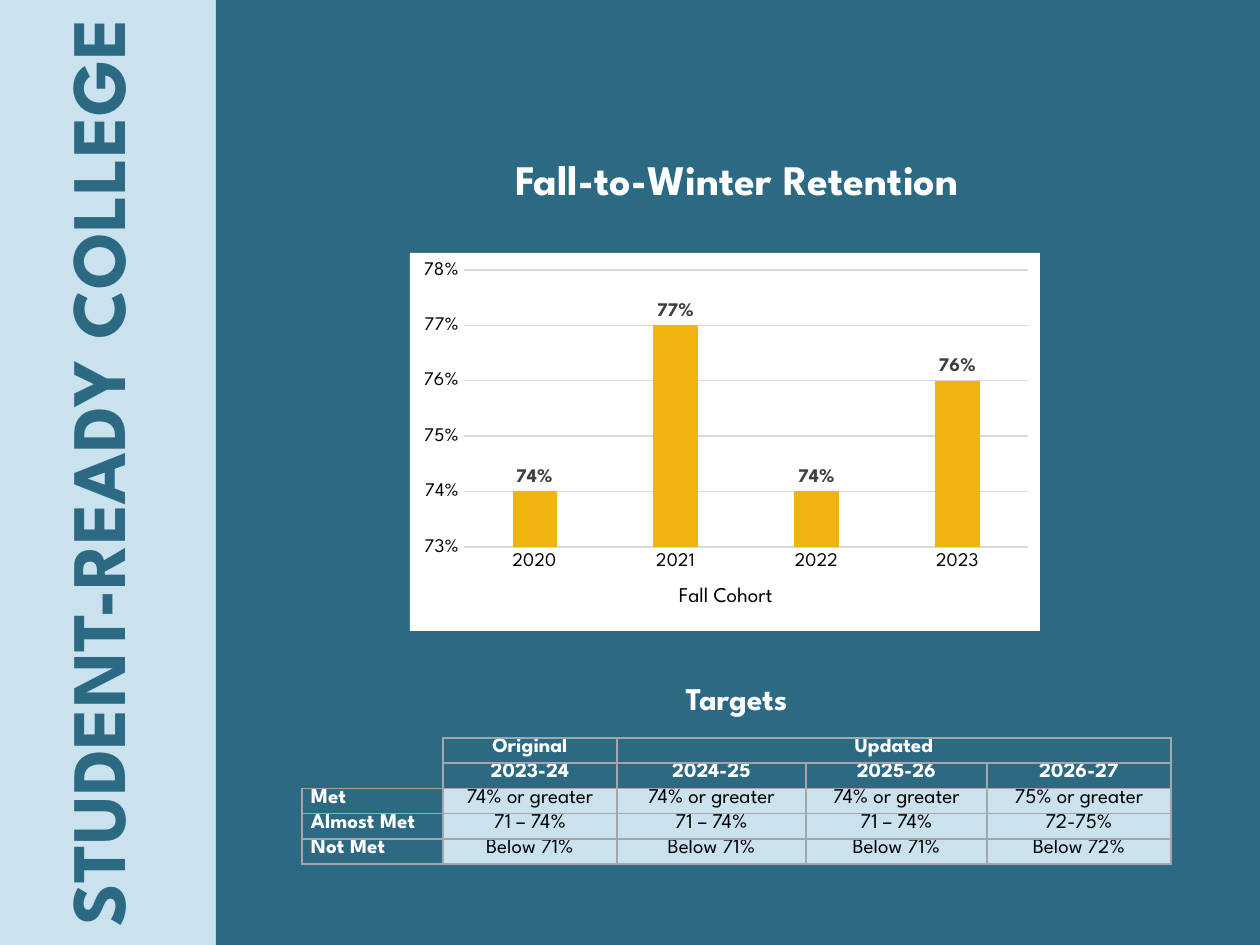
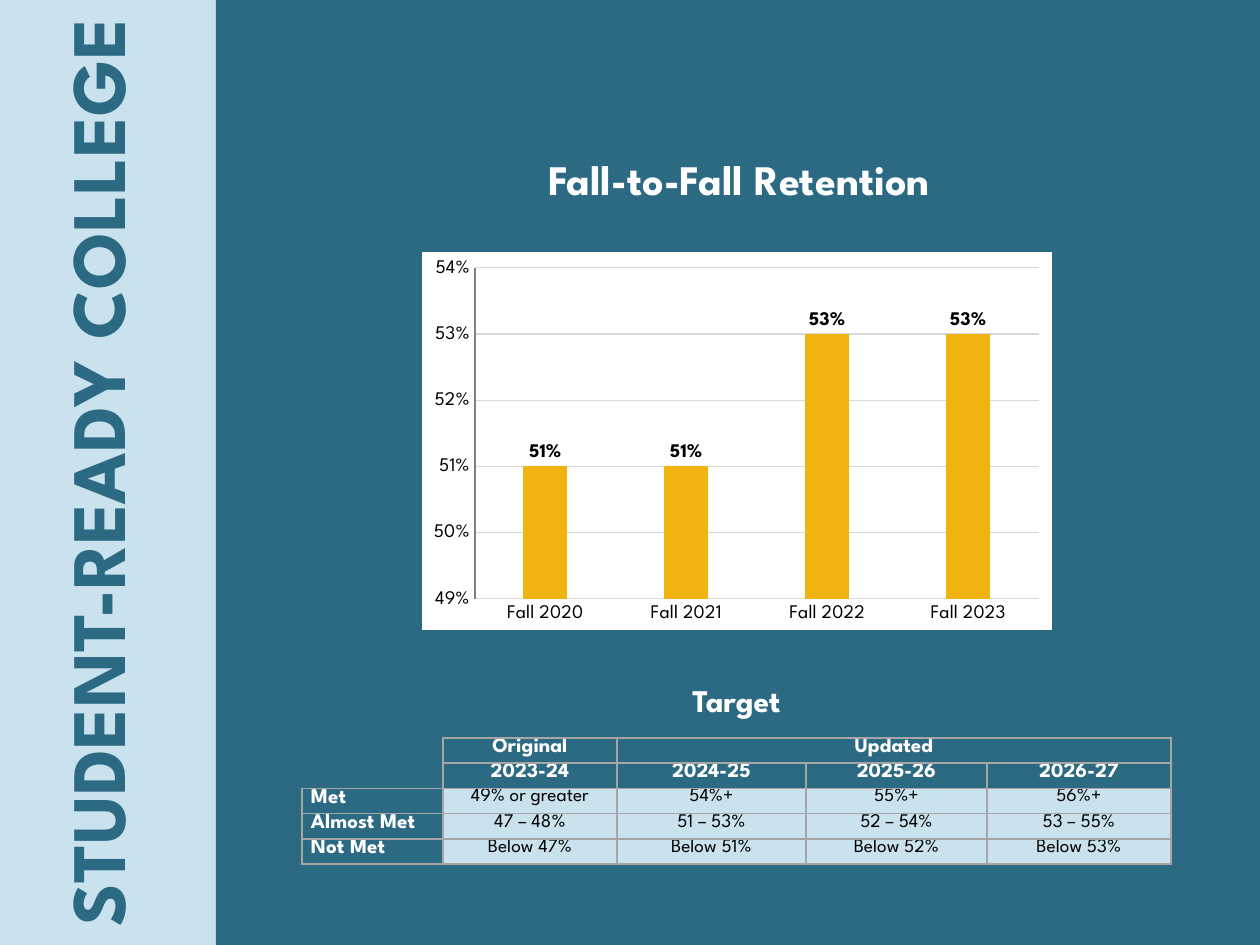
from lxml import etree
from pptx import Presentation
from pptx.chart.data import CategoryChartData as ChartData
from pptx.dml.color import RGBColor as RGB
from pptx.enum.chart import XL_CHART_TYPE as ChartType
from pptx.enum.chart import XL_LABEL_POSITION as LabelPos
from pptx.enum.chart import XL_TICK_MARK as Tick
from pptx.enum.shapes import MSO_SHAPE as Preset
from pptx.enum.text import MSO_ANCHOR as Anchor
from pptx.enum.text import MSO_AUTO_SIZE as AutoSize
from pptx.enum.text import PP_ALIGN as Align
from pptx.oxml import parse_xml
from pptx.oxml.ns import nsdecls, qn
from pptx.util import Pt

# ---- Content ----
SIDEBAR_TEXT = "STUDENT-READY COLLEGE"
PERIODS = [
    ["", "Original", "Updated", "", ""],
    ["", "2023-24", "2024-25", "2025-26", "2026-27"],
]
RETENTION = [
    dict(
        title="Fall-to-Winter Retention", title_at=(255, 147, 964, 63),
        cohorts={"2020": 0.74, "2021": 0.77, "2022": 0.74, "2023": 0.76},
        chart_at=(410, 253, 630, 378), plot=(54, 17, 564, 277),
        scale=(0.73, 0.78), axis_title="Fall Cohort", axis_title_at=(265, 329),
        label_color="charcoal", axis_line=None,
        heading="Targets", heading_at=(499, 673, 475, 52), target_size=12,
        targets=[
            ["Met", "74% or greater", "74% or greater", "74% or greater", "75% or greater"],
            ["Almost Met", "71 – 74%", "71 – 74%", "71 – 74%", "72-75%"],
            ["Not Met", "Below 71%", "Below 71%", "Below 71%", "Below 72%"],
        ],
    ),
    dict(
        title="Fall-to-Fall Retention", title_at=(257, 147, 964, 63),
        cohorts={"Fall 2020": 0.51, "Fall 2021": 0.51, "Fall 2022": 0.53, "Fall 2023": 0.53},
        chart_at=(422, 252, 630, 378), plot=(53, 16, 564, 331),
        scale=(0.49, 0.54), axis_title=None, axis_title_at=None,
        label_color="black", axis_line="gray",
        heading="Target", heading_at=(499, 675, 475, 52), target_size=11,
        targets=[
            ["Met", "49% or greater", "54%+", "55%+", "56%+"],
            ["Almost Met", "47 – 48%", "51 – 53%", "52 – 54%", "53 – 55%"],
            ["Not Met", "Below 47%", "Below 51%", "Below 52%", "Below 53%"],
        ],
    ),
]

# ---- Shared look ----
COLORS = dict(teal="2C6983", ice="C9E2ED", gold="F0B310", white="FFFFFF", black="000000",
              charcoal="404040", gray="808080", border="A6A6A6", grid="D9D9D9")
FONT = "League Spartan"
PX = 914400 / 126
WIDTH, HEIGHT = 1260, 945
SIDEBAR = 216
SIDEBAR_AT = (-331, 373, 945, 199)
TABLE_AT = (302, 738, 869, 126)
COLUMNS = [141, 174, 189, 181, 184]
CELL_FORMAT = dict(margin_left=9, margin_right=9, margin_top=0, margin_bottom=0)


def px(*lengths):
    return [round(length * PX) for length in lengths]


def color(name):
    return RGB.from_string(COLORS[name])


def style(font, size, ink, bold=False):
    for key, value in dict(name=FONT, size=Pt(size), bold=bold).items():
        setattr(font, key, value)
    font.color.rgb = color(ink)


def write(frame, text, size, ink, align=Align.CENTER, bold=True):
    paragraph = frame.paragraphs[0]
    paragraph.alignment = align
    run = paragraph.add_run()
    run.text = text
    style(run.font, size, ink, bold)
    return paragraph


def add_band(slide, left, width, fill):
    band = slide.shapes.add_shape(Preset.RECTANGLE, *px(left, 0, width, HEIGHT))
    band.shadow.inherit = False
    band.fill.solid()
    band.fill.fore_color.rgb = color(fill)
    band.line.fill.background()


def add_caption(slide, at, text, size, ink, rotation=0):
    caption = slide.shapes.add_textbox(*px(*at))
    caption.rotation = rotation
    caption.text_frame.word_wrap = True
    caption.text_frame.auto_size = AutoSize.SHAPE_TO_FIT_TEXT
    write(caption.text_frame, text, size, ink)


def place_title(slide, at, text):
    title = slide.shapes.title
    slide.shapes._spTree.append(title._element)  # in front of the bands
    title.left, title.top, title.width, title.height = px(*at)
    frame = title.text_frame
    for key, value in dict(word_wrap=True, vertical_anchor=Anchor.TOP,
                           auto_size=AutoSize.SHAPE_TO_FIT_TEXT).items():
        setattr(frame, key, value)
    write(frame, text, 24, "white").space_after = Pt(12)


# ---- Chart ----
def chart_layout(at, size, target=""):
    """Place a chart part by fractions of the chart's size."""
    fractions = [length / size[i % 2] for i, length in enumerate(at)]
    modes = "".join(f'<c:{axis}Mode val="edge"/>' for axis in "xy")
    places = "".join(f'<c:{key} val="{value:.3f}"/>' for key, value in zip("xywh", fractions))
    return parse_xml(f'<c:layout {nsdecls("c")}><c:manualLayout>{target}{modes}{places}'
                     '</c:manualLayout></c:layout>')


def set_layout(parent, layout, after=None):
    for old in parent.findall(qn("c:layout")):
        parent.remove(old)
    if after is None:
        parent.insert(0, layout)
    else:
        after.addnext(layout)


def add_cohort_chart(slide, page):
    cohorts = ChartData(number_format="0%")
    cohorts.categories = list(page["cohorts"])
    cohorts.add_series("Series 1", page["cohorts"].values())
    chart = slide.shapes.add_chart(ChartType.COLUMN_CLUSTERED, *px(*page["chart_at"]), cohorts).chart
    chart.has_title = chart.has_legend = False
    style(chart.font, 11, "black")

    # White background and fixed plot area
    space = chart._chartSpace
    space.find(qn("c:chart")).addnext(parse_xml(
        f'<c:spPr {nsdecls("c", "a")}><a:solidFill><a:srgbClr val="{COLORS["white"]}"/></a:solidFill>'
        '<a:ln><a:noFill/></a:ln></c:spPr>'))
    size = page["chart_at"][2:]
    set_layout(space.find(".//" + qn("c:plotArea")),
               chart_layout(page["plot"], size, '<c:layoutTarget val="inner"/>'))

    # Columns and labels
    plot = chart.plots[0]
    for key, value in dict(gap_width=219, overlap=-27, vary_by_categories=False,
                           has_data_labels=True).items():
        setattr(plot, key, value)
    columns = plot.series[0].format.fill
    columns.solid()
    columns.fore_color.rgb = color("gold")
    labels = plot.data_labels
    for key, value in dict(show_value=True, position=LabelPos.OUTSIDE_END, number_format="0%",
                           number_format_is_linked=False).items():
        setattr(labels, key, value)
    style(labels.font, 11, page["label_color"], True)

    # Axes
    rates, years = chart.value_axis, chart.category_axis
    rates.minimum_scale, rates.maximum_scale = page["scale"]
    rates.major_unit = 0.01
    rates.tick_labels.number_format = "0%"
    rates.tick_labels.number_format_is_linked = False
    for axis in (rates, years):
        axis.major_tick_mark = axis.minor_tick_mark = Tick.NONE
    lines = [(rates.major_gridlines.format.line, "grid"), (years.format.line, "grid"),
             (rates.format.line, page["axis_line"])]
    for line, ink in lines:
        if ink:
            line.width = Pt(0.75)
            line.color.rgb = color(ink)
        else:
            line.fill.background()
    if page["axis_title"]:
        write(years.axis_title.text_frame, page["axis_title"], 12, "black", bold=False)
        title = years.axis_title._element
        set_layout(title, chart_layout(page["axis_title_at"], size), title.find(qn("c:tx")))


# ---- Table ----
def set_borders(cell, visible):
    props = cell._tc.get_or_add_tcPr()
    for index, side in enumerate("LRTB"):
        paint = (f'<a:solidFill><a:srgbClr val="{COLORS["border"]}"/></a:solidFill>'
                 if side in visible else "<a:noFill/>")
        props.insert(index, parse_xml(f'<a:ln{side} {nsdecls("a")} w="12700">{paint}</a:ln{side}>'))


def add_targets_table(slide, page):
    rows = PERIODS + page["targets"]
    table = slide.shapes.add_table(len(rows), len(COLUMNS), *px(*TABLE_AT)).table
    for column, width in zip(table.columns, COLUMNS):
        column.width, = px(width)
    for row in table.rows:
        row.height, = px(TABLE_AT[3] / len(rows))
    table.cell(0, 2).merge(table.cell(0, 4))
    for r, texts in enumerate(rows):
        for c, text in enumerate(texts):
            cell = table.cell(r, c)
            header, corner = r < len(PERIODS), r < len(PERIODS) and c == 0
            is_target = not header and c > 0
            for key, value in CELL_FORMAT.items():
                setattr(cell, key, *px(value))
            cell.fill.solid()
            cell.fill.fore_color.rgb = color("ice" if is_target else "teal")
            set_borders(cell, ("R", "RB")[r] if corner else "LRTB")
            if text:
                write(cell.text_frame, text, page["target_size"] if is_target else 12,
                      "black" if is_target else "white",
                      Align.CENTER if header or c else Align.LEFT, not is_target)
            else:
                # Keeps an empty cell from stretching its row
                etree.SubElement(cell.text_frame.paragraphs[0]._p, qn("a:endParaRPr"), sz="1000")


# ---- Slides ----
def main():
    deck = Presentation()
    deck.slide_width, deck.slide_height = px(WIDTH, HEIGHT)
    for page in RETENTION:
        slide = deck.slides.add_slide(deck.slide_layouts[5])
        add_band(slide, 0, SIDEBAR, "ice")
        add_band(slide, SIDEBAR, WIDTH - SIDEBAR, "teal")
        add_caption(slide, SIDEBAR_AT, SIDEBAR_TEXT, 44, "teal", rotation=270)
        place_title(slide, page["title_at"], page["title"])
        add_caption(slide, page["heading_at"], page["heading"], 18, "white")
        add_cohort_chart(slide, page)
        add_targets_table(slide, page)
    deck.save("out.pptx")


if __name__ == "__main__":
    main()
